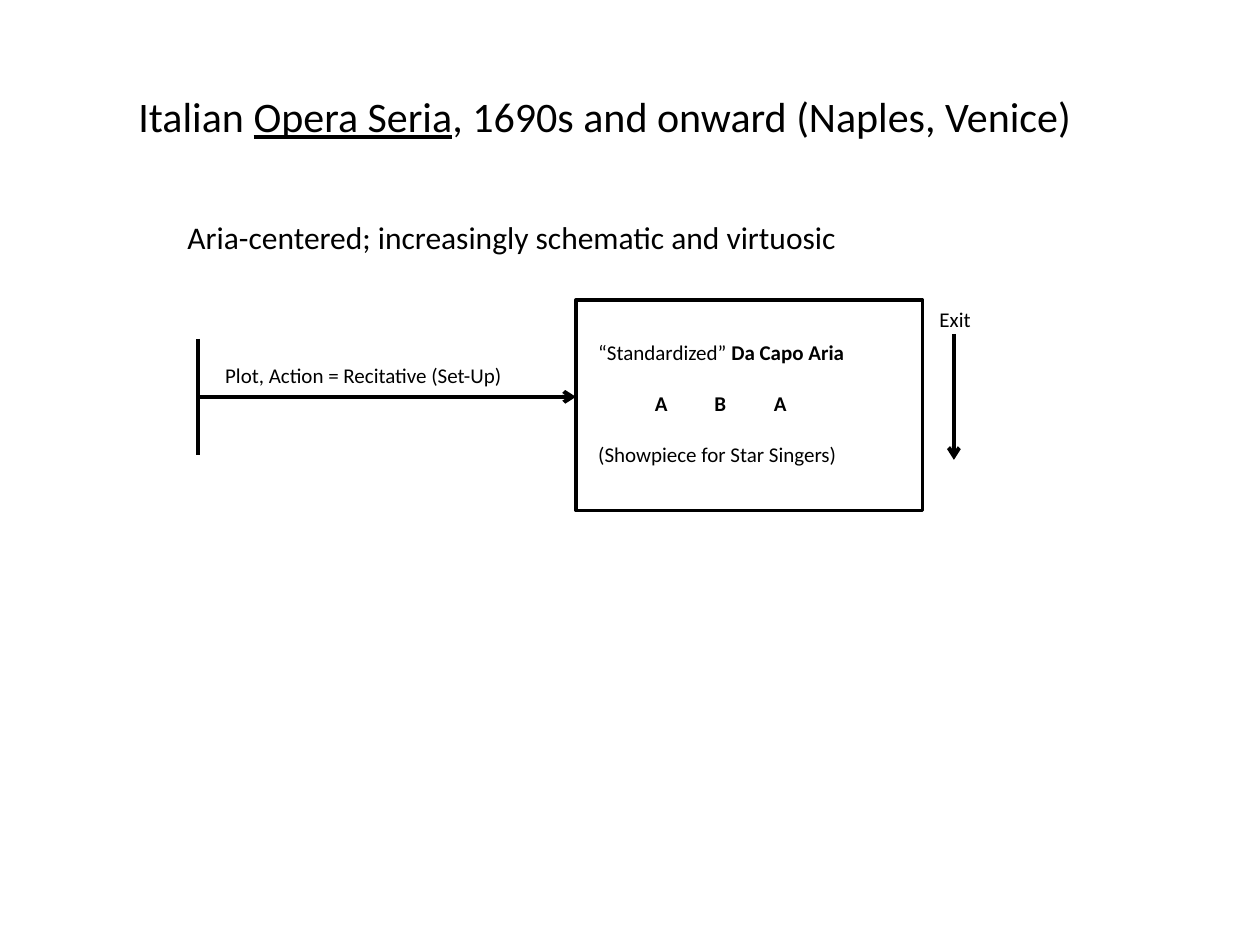
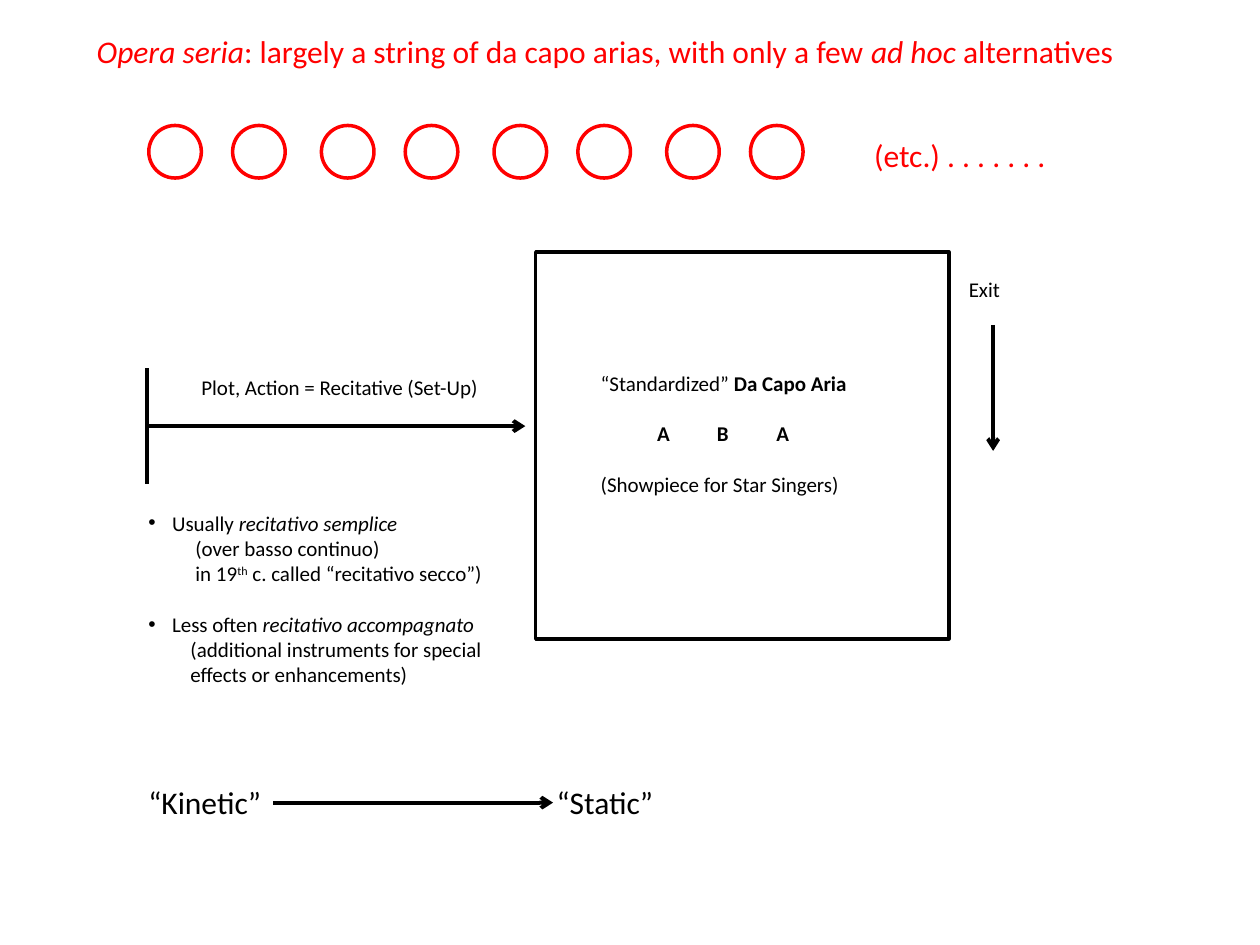
from dataclasses import dataclass

from lxml.etree import SubElement
from pptx import Presentation
from pptx.dml.color import RGBColor
from pptx.enum.shapes import MSO_CONNECTOR as Connector, MSO_SHAPE as Preset
from pptx.enum.text import MSO_AUTO_SIZE as AutoSize
from pptx.oxml.ns import qn
from pptx.slide import Slide
from pptx.util import Cm, Pt

COLORS = {"ink": "000000", "accent": "FF0000"}
FONT = "Calibri"
SMALL, LARGE, HEADLINE = 12, 18, 24
BLANK_LINE = 14.6  # points between paragraphs set one line apart
OUTLINE, STROKE = 2, 2.25
BULLET_INDENT = 0.48


@dataclass(frozen=True)
class Span:
    text: str
    bold: bool = False
    italic: bool = False
    underline: bool = False
    raised: bool = False


@dataclass(frozen=True)
class Para:
    spans: tuple[Span, ...]
    indent: float = 0
    bullet: bool = False
    gap: float = 0
    tabs: tuple[float, ...] = ()


@dataclass(frozen=True)
class Scheme:
    """Places, in cm, of the recitative-to-aria diagram."""
    start: tuple[float, float]
    plot: tuple[float, float]
    frame: tuple[float, float, float, float]
    aria: tuple[float, float]
    exit_label: tuple[float, float]
    exit_arrow: tuple[float, float]


def plain(text: str, **layout) -> Para:
    return Para((Span(text),), **layout)


ARIA = (
    Para((Span("“Standardized” "), Span("Da Capo Aria", bold=True))),
    Para((Span("\tA\tB\tA", bold=True),), gap=BLANK_LINE,
         tabs=tuple(1.14 + 1.2 * section for section in range(3))),
    plain("(Showpiece for Star Singers)", gap=BLANK_LINE),
)
RECITATIVE_KINDS = (
    Para((Span("Usually "), Span("recitativo semplice", italic=True)), bullet=True),
    plain("(over basso continuo)", indent=0.95),
    Para((Span("in 19"), Span("th", raised=True), Span(" c. called “recitativo secco”)")),
         indent=0.95),
    Para((Span("Less often "), Span("recitativo accompagnato", italic=True)),
         bullet=True, gap=BLANK_LINE),
    plain("(additional instruments for special", indent=0.85),
    plain("effects or enhancements)", indent=0.85),
)


def format_paragraph(paragraph, para: Para) -> None:
    """Set spacing, indent, bullet and tab stops."""
    if para.gap:
        paragraph.space_before = Pt(para.gap)
    properties = paragraph._p.get_or_add_pPr()
    if para.bullet:
        properties.set("marL", str(Cm(BULLET_INDENT)))
        properties.set("indent", str(-Cm(BULLET_INDENT)))
        SubElement(properties, qn("a:buFont")).set("typeface", "Arial")
        SubElement(properties, qn("a:buChar")).set("char", "•")
    elif para.indent:
        properties.set("marL", str(Cm(para.indent)))
    if para.tabs:
        stops = SubElement(properties, qn("a:tabLst"))
        for position in para.tabs:
            stop = SubElement(stops, qn("a:tab"))
            stop.set("pos", str(Cm(position)))
            stop.set("algn", "l")


def add_text(slide: Slide, at: tuple[float, float], size: tuple[float, float],
             paras: tuple[Para, ...], points: int = SMALL, color: str = "ink") -> None:
    frame = slide.shapes.add_textbox(*map(Cm, at + size)).text_frame
    frame.word_wrap = True
    frame.auto_size = AutoSize.SHAPE_TO_FIT_TEXT
    for number, para in enumerate(paras):
        paragraph = frame.add_paragraph() if number else frame.paragraphs[0]
        format_paragraph(paragraph, para)
        for span in para.spans:
            run = paragraph.add_run()
            run.text = span.text
            font = run.font
            font.name, font.size = FONT, Pt(points)
            font.color.rgb = RGBColor.from_string(COLORS[color])
            font.bold, font.italic, font.underline = span.bold, span.italic, span.underline
            if span.raised:
                run._r.get_or_add_rPr().set("baseline", "30000")


def add_outline(slide: Slide, preset: Preset, place: tuple[float, float, float, float],
                color: str = "ink") -> None:
    shape = slide.shapes.add_shape(preset, *map(Cm, place))
    shape.shadow.inherit = False
    shape.fill.background()
    shape.line.color.rgb = RGBColor.from_string(COLORS[color])
    shape.line.width = Pt(OUTLINE)


def add_line(slide: Slide, start: tuple[float, float], across: float = 0,
             down: float = 0, arrow: bool = True) -> None:
    x, y = start
    line = slide.shapes.add_connector(
        Connector.STRAIGHT, Cm(x), Cm(y), Cm(x + across), Cm(y + down))
    line.line.color.rgb = RGBColor.from_string(COLORS["ink"])
    line.line.width = Pt(STROKE)
    if arrow:
        SubElement(line.line._get_or_add_ln(), qn("a:tailEnd")).set("type", "arrow")
    SubElement(line._element.spPr, qn("a:effectLst"))


def add_scheme(slide: Slide, scheme: Scheme) -> None:
    x, y = scheme.start
    stem = 2.34
    add_line(slide, scheme.start, across=7.62)
    add_outline(slide, Preset.RECTANGLE, scheme.frame)
    add_line(slide, scheme.exit_arrow, down=2.54)
    add_text(slide, scheme.plot, (7.19, 0.76), (plain("Plot, Action = Recitative (Set-Up)"),))
    add_text(slide, scheme.aria, (6.55, 2.82), ARIA)
    add_text(slide, scheme.exit_label, (1.47, 0.76), (plain("Exit"),))
    add_line(slide, (x, y - stem / 2), down=stem, arrow=False)


def build_overview(slide: Slide) -> None:
    headline = Para((Span("Italian "), Span("Opera Seria", underline=True),
                     Span(", 1690s and onward (Naples, Venice)")))
    add_text(slide, (2.54, 1.7), (19.38, 1.28), (headline,), HEADLINE)
    add_text(slide, (3.53, 4.27), (16, 1.02),
             (plain("Aria-centered; increasingly schematic and virtuosic"),), LARGE)
    add_scheme(slide, Scheme(
        start=(3.99, 8), plot=(4.29, 7.19), frame=(11.61, 6.05, 6.99, 4.24),
        aria=(11.81, 6.73), exit_label=(18.69, 6.05), exit_arrow=(19.23, 6.73)))


def build_aria_string(slide: Slide) -> None:
    add_scheme(slide, Scheme(
        start=(2.97, 8.59), plot=(3.81, 7.42), frame=(10.8, 5.08, 8.33, 7.8),
        aria=(11.86, 7.34), exit_label=(19.28, 5.46), exit_arrow=(20.02, 6.55)))
    add_text(slide, (2.74, 10.16), (7.62, 4.37), RECITATIVE_KINDS)

    for left, pole in ((2.74, "“Kinetic”"), (10.97, "“Static”")):
        add_text(slide, (left, 15.67), (4, 1.02), (plain(pole),), LARGE)
    add_line(slide, (5.51, 16.18), across=5.64)

    diameter = 1.06
    for aria in range(8):
        pair, second = divmod(aria, 2)
        left = 3 + 3.48 * pair + 1.69 * second
        add_outline(slide, Preset.OVAL, (left, 2.53, diameter, diameter), "accent")
    add_text(slide, (17.37, 2.62), (6.78, 1.02), (plain("(etc.) . . . . . . ."),),
             LARGE, "accent")

    headline = Para((Span("Opera seria", italic=True),
                     Span(": largely a string of da capo arias, with only a few "),
                     Span("ad hoc ", italic=True), Span("alternatives")))
    add_text(slide, (1.7, 0.53), (22.05, 1.02), (headline,), LARGE, "accent")


def main() -> None:
    deck = Presentation()
    deck.slide_width, deck.slide_height = Cm(25.4), Cm(19.05)
    blank = deck.slide_layouts[6]
    for build in (build_overview, build_aria_string):
        build(deck.slides.add_slide(blank))
    deck.save("out.pptx")


if __name__ == "__main__":
    main()
